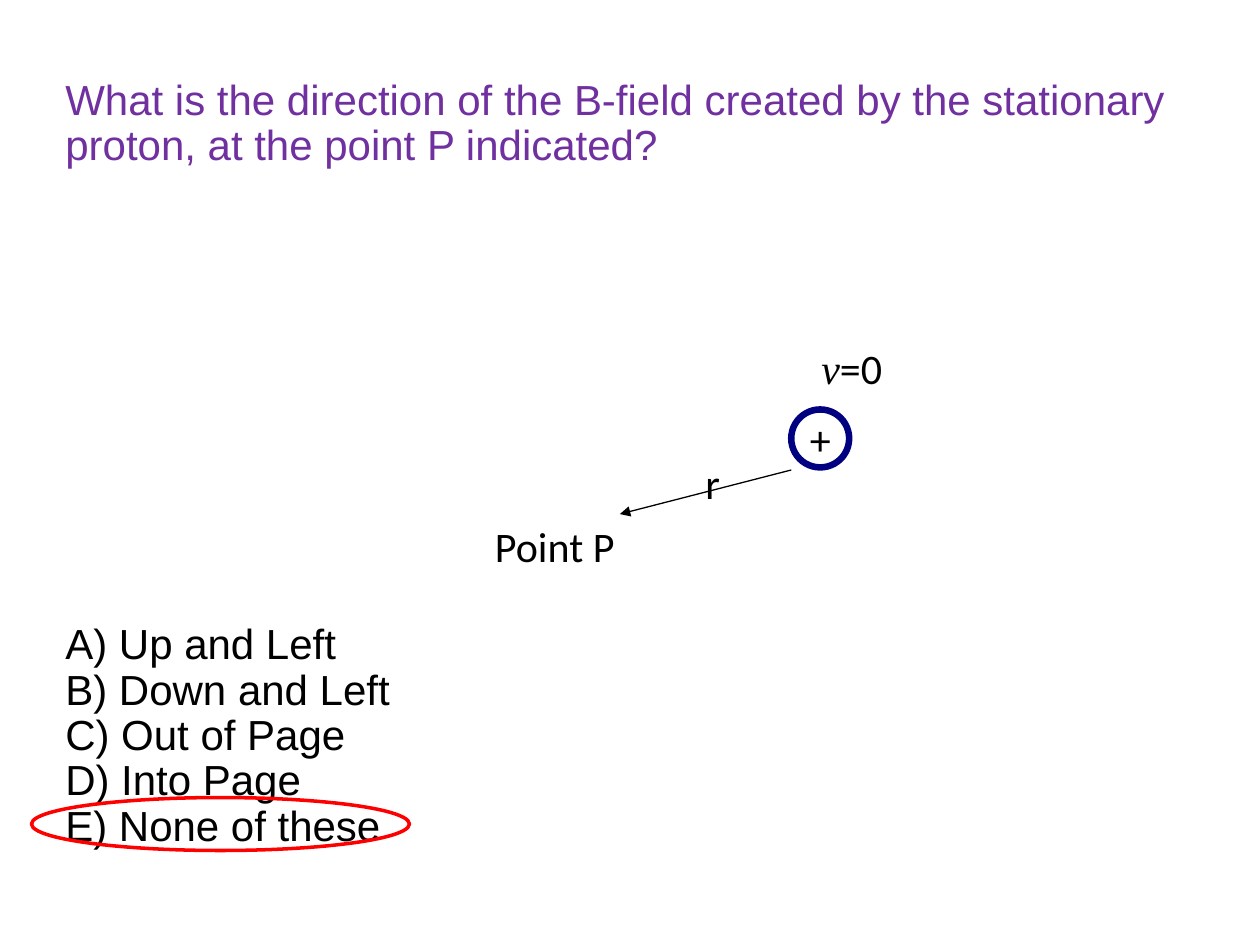
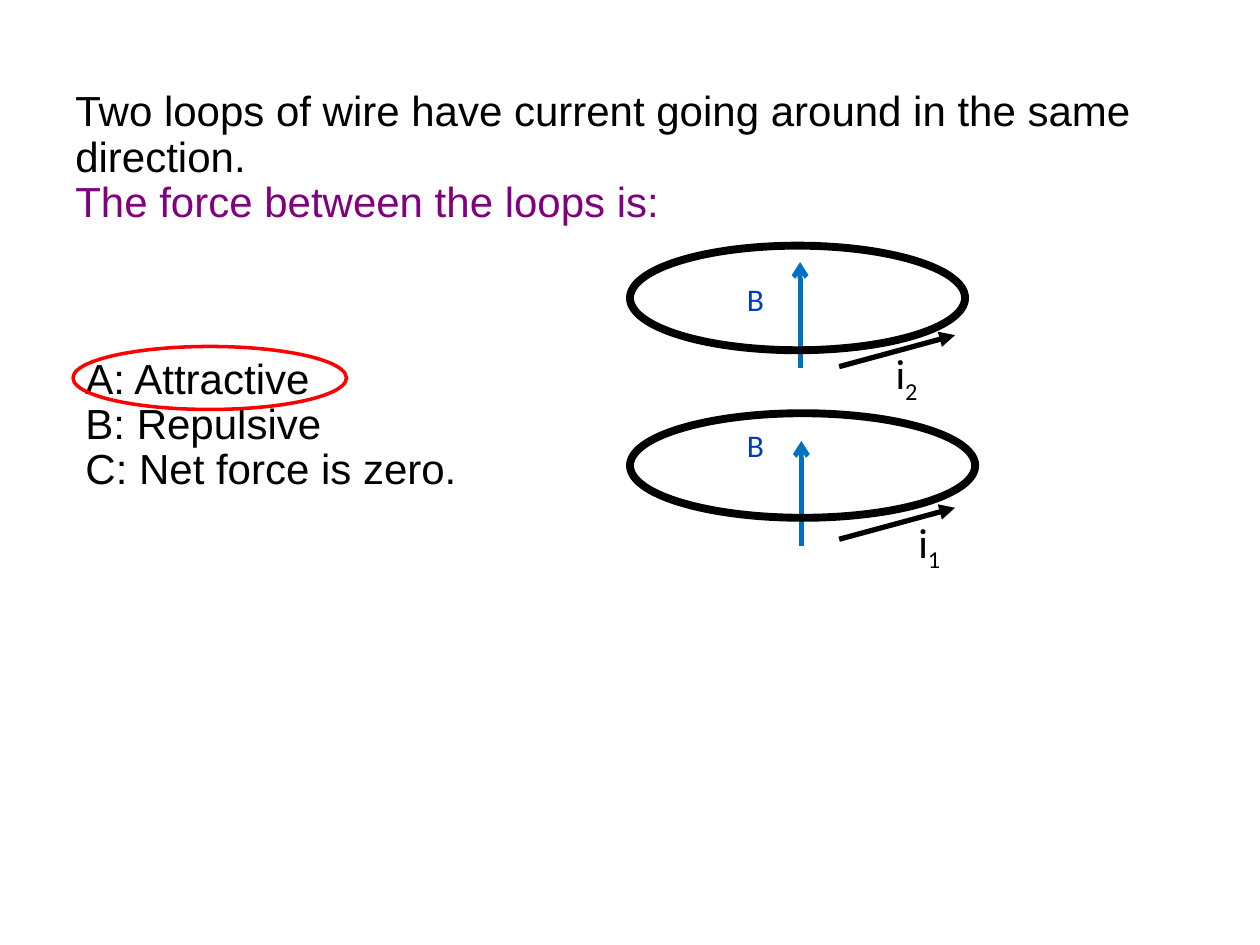
from pptx import Presentation
from pptx import util as u
from pptx.dml.color import RGBColor
from pptx.enum import shapes, text
from pptx.oxml.ns import qn
from lxml import etree

BLACK = RGBColor(0x00, 0x00, 0x00)
QUESTION_PURPLE = RGBColor(0x70, 0x30, 0xA0)
PROMPT_PURPLE = RGBColor(0x80, 0x00, 0x80)
NAVY = RGBColor(0x00, 0x00, 0x80)
ANSWER_RED = RGBColor(0xFF, 0x00, 0x00)
FIELD_BLUE = RGBColor(0x00, 0x70, 0xC0)
LABEL_BLUE = RGBColor(0x00, 0x3D, 0xB8)
BODY_FONT, LABEL_FONT, SYMBOL_FONT = "Arial", "Calibri", "Times New Roman"


def add_text(slide, bounds, paragraphs, font=LABEL_FONT, size=24, spacing=None, wrap=False):
    frame = slide.shapes.add_textbox(*map(u.Inches, bounds)).text_frame
    frame.word_wrap = wrap
    for index, runs in enumerate(paragraphs):
        paragraph = frame.paragraphs[0] if index == 0 else frame.add_paragraph()
        paragraph.line_spacing = spacing
        for words, color in runs:
            run = paragraph.add_run()
            run.text = words
            run.font.name = font
            run.font.size = u.Pt(size)
            run.font.color.rgb = color
    return frame


def add_arrow(slide, start, end, color, width, head):
    arrow = slide.shapes.add_connector(
        shapes.MSO_CONNECTOR.STRAIGHT, *map(u.Inches, start + end))
    arrow.line.color.rgb = color
    arrow.line.width = u.Pt(width)
    etree.SubElement(arrow.line._get_or_add_ln(), qn("a:tailEnd"), type=head)
    etree.SubElement(arrow._element.spPr, qn("a:effectLst"))


presentation = Presentation()
presentation.slide_width = u.Inches(10)
presentation.slide_height = u.Inches(7.5)
blank = presentation.slide_layouts[6]
proton_slide = presentation.slides.add_slide(blank)
loops_slide = presentation.slides.add_slide(blank)

add_text(proton_slide, (0.42, 0.58, 9.08, 0.85), [[(
    "What is the direction of the B-field created by the stationary proton, "
    "at the point P indicated?", QUESTION_PURPLE)]], BODY_FONT, spacing=0.9, wrap=True)
choices = ["Up and Left", "Down and Left", "Out of Page", "Into Page", "None of these"]
choice_frame = add_text(
    proton_slide, (0.42, 4.9, 9.08, 1.95),
    [[(" " + choice, BLACK)] for choice in choices], BODY_FONT, spacing=0.9, wrap=True)
for paragraph in choice_frame.paragraphs:
    properties = paragraph._p.get_or_add_pPr()
    etree.SubElement(properties, qn("a:buFont"), typeface=BODY_FONT)
    etree.SubElement(properties, qn("a:buAutoNum"), type="alphaUcParenR")

add_text(proton_slide, (3.83, 4.08, 1.28, 0.5), [[("Point P", BLACK)]])
add_arrow(proton_slide, (6.28, 3.73), (4.92, 4.08), BLACK, 0.75, "triangle")
add_text(proton_slide, (5.5, 3.58, 0.31, 0.5), [[("r", BLACK)]])
add_text(proton_slide, (6.33, 3.23, 0.32, 0.5), [[("+", BLACK)]])
speed_frame = add_text(proton_slide, (6.42, 2.67, 0.71, 0.5), [[("v", BLACK), ("=0", BLACK)]])
speed_symbol = speed_frame.paragraphs[0].runs[0]
speed_symbol.font.name = SYMBOL_FONT
speed_symbol.font.italic = True

for bottom, top, x in [(4.33, 3.5, 6.36), (2.92, 2.08, 6.35)]:
    add_arrow(loops_slide, (x, bottom), (x, top), FIELD_BLUE, 2.75, "arrow")

add_text(loops_slide, (0.5, 0.67, 9.17, 1.16), [
    [("Two loops of wire have current going around in the same direction.", BLACK)],
    [("The force between the loops is:", PROMPT_PURPLE)],
], BODY_FONT, spacing=0.9, wrap=True)
force_frame = add_text(loops_slide, (0.58, 2.75, 5.12, 1.65), [
    [(choice, BLACK)] for choice in ("A: Attractive", "B: Repulsive", "C: Net force is zero.")
], BODY_FONT, spacing=0.9, wrap=True)
force_frame.paragraphs[0].line_spacing = None
force_frame.paragraphs[0].space_before = u.Pt(6)
for paragraph in force_frame.paragraphs:
    properties = paragraph._p.get_or_add_pPr()
    properties.set("marL", str(u.Inches(0.38)))
    properties.set("indent", str(u.Inches(-0.38)))

for slide, bounds, color, width in [
    (proton_slide, (6.28, 3.25, 0.46, 0.46), NAVY, 3.75),
    (proton_slide, (0.25, 6.33, 3, 0.42), ANSWER_RED, 2),
    (loops_slide, (5, 1.95, 2.66, 0.83), BLACK, 4.5),
    (loops_slide, (5, 3.28, 2.74, 0.83), BLACK, 4.5),
    (loops_slide, (0.58, 2.75, 2.17, 0.5), ANSWER_RED, 2),
]:
    ellipse = slide.shapes.add_shape(shapes.MSO_SHAPE.OVAL, *map(u.Inches, bounds))
    ellipse.shadow.inherit = False
    ellipse.fill.background()
    ellipse.line.color.rgb = color
    ellipse.line.width = u.Pt(width)

for number, arrow_y, label_x, label_y, field_y in [
    ("1", 4.28, 7.19, 4.05, 3.33),
    ("2", 2.91, 7.01, 2.71, 2.17),
]:
    add_arrow(loops_slide, (6.66, arrow_y), (7.58, arrow_y - 0.25), BLACK, 3, "triangle")
    current_frame = add_text(
        loops_slide, (label_x, label_y, 0.4, 0.5), [[("i", BLACK), (number, BLACK)]])
    current_frame.paragraphs[0].runs[1].font._element.set("baseline", "-25000")
    field_frame = add_text(
        loops_slide, (5.83, field_y, 0.34, 0.4), [[("B", LABEL_BLUE)]], size=18)
    field_frame.vertical_anchor = text.MSO_ANCHOR.MIDDLE

presentation.save("out.pptx")
